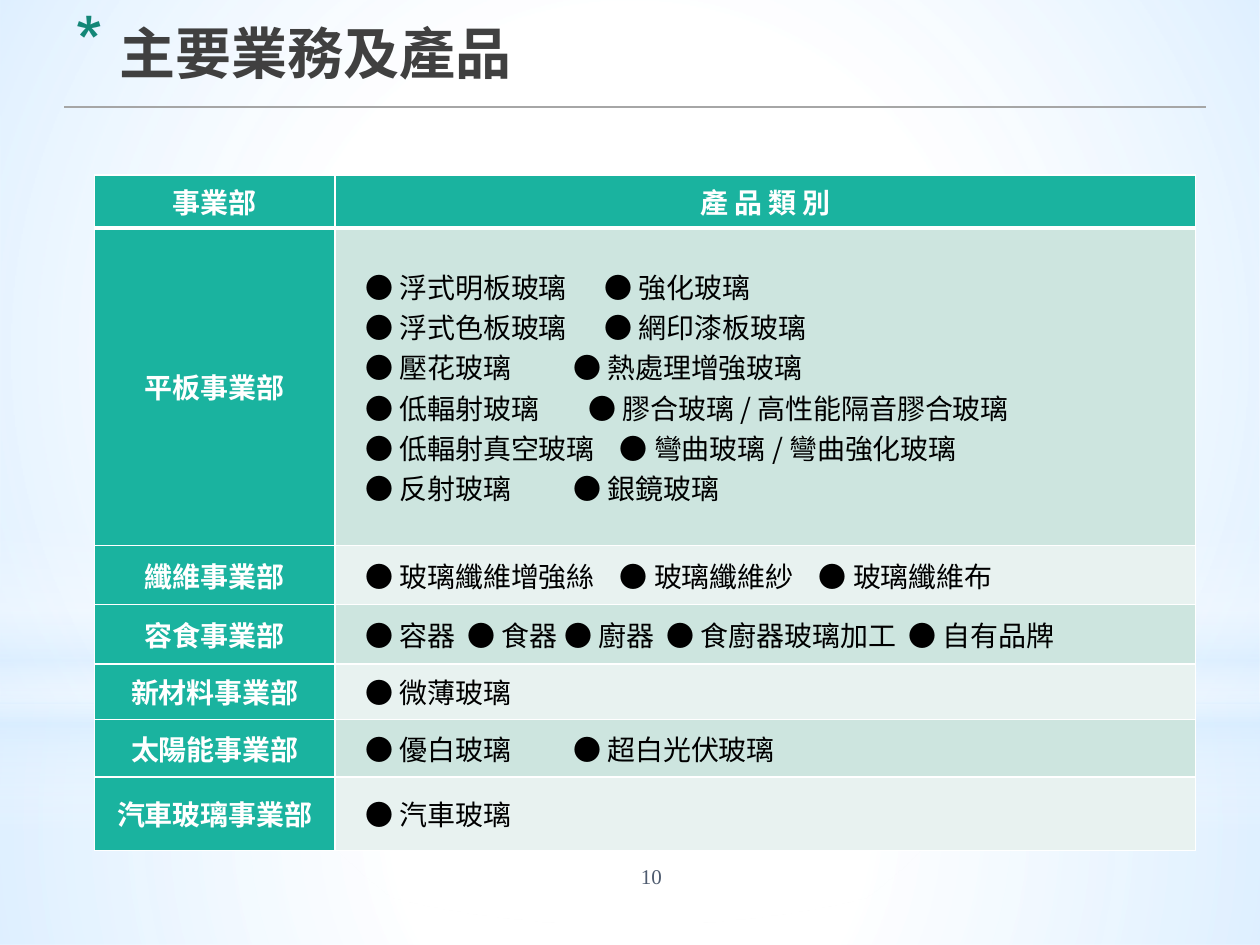
"""Build the slide on main businesses and products."""
from lxml import etree
from pptx import Presentation
from pptx.dml.color import RGBColor
from pptx.enum import shapes, text
from pptx.oxml import ns, parse_xml
from pptx.util import Inches, Pt

HUES = {"white": "FFFFFF", "sky": "D6ECFF", "teal": "1AB39F", "star": "138677",
        "mint": "CDE5DF", "pale": "E8F2F0", "ink": "000000", "dark": "404040",
        "rule": "A6A6A6", "slate": "4E5B6F"}
SANS, SERIF = "Noto Sans CJK SC", "Times New Roman"
TITLE, PAGE = "主要業務及產品", "10"
HEADS = ["事業部", "產 品 類 別"]
# Each line: tab stops in inches, then the products
UNITS = [
    ("平板事業部", 2.52, [
        ([1.9], ["浮式明板玻璃", "強化玻璃"]),
        ([1.9], ["浮式色板玻璃", "網印漆板玻璃"]),
        ([1.65], ["壓花玻璃", "熱處理增強玻璃"]),
        ([1.77], ["低輻射玻璃", "膠合玻璃 / 高性能隔音膠合玻璃"]),
        ([2.02], ["低輻射真空玻璃", "彎曲玻璃 / 彎曲強化玻璃"]),
        ([1.65], ["反射玻璃", "銀鏡玻璃"])]),
    ("纖維事業部", 0.47, [([2.02, 3.6], ["玻璃纖維增強絲", "玻璃纖維紗", "玻璃纖維布"])]),
    ("容食事業部", 0.47, [([0.81, 1.58, 2.39, 4.31],
                      ["容器", "食器", "廚器", "食廚器玻璃加工", "自有品牌"])]),
    ("新材料事業部", 0.44, [([], ["微薄玻璃"])]),
    ("太陽能事業部", 0.46, [([1.65], ["優白玻璃", "超白光伏玻璃"])]),
    ("汽車玻璃事業部", 0.58, [([], ["汽車玻璃"])]),
]
ROUND = '<a:path path="circle"><a:fillToRect l="50000" t="50000" r="50000" b="50000"/></a:path>'
DOWN = '<a:lin ang="5400000" scaled="0"/>'
BACK = [
    ("RECTANGLE", (0, 5.58, 10, 1.92), ROUND,
     [(0, "white", 91), (37, "white", 76), (100, "sky", 79)]),
    ("RECTANGLE", (0, 0, 10, 5.58), ROUND,
     [(0, "white", 89), (48, "white", 62), (100, "sky", 79)]),
    ("RECTANGLE", (0, 4.12, 10, 2.5), DOWN,
     [(0, "white", 0), (29, "white", 30), (45, "sky", 40),
      (55, "white", 26), (65, "sky", 60), (100, "white", 0)]),
    ("OVAL", (0, 1.75, 10, 5.58), ROUND, [(0, "white", 100), (56, "white", 0)]),
]


def rgb(name):
    return RGBColor.from_string(HUES[name])


def node(xml):
    return parse_xml(xml.replace(">", f" {ns.nsdecls('a')}>", 1) if "/>" not in xml.split(">")[0] + ">"
                     else xml.replace("/>", f" {ns.nsdecls('a')}/>", 1))


def place(shape, box):
    shape.left, shape.top, shape.width, shape.height = map(Inches, box)


def style(para, size, hue, face=SANS, bold=False):
    font = para.font
    font.size, font.bold, font.name = Pt(size), bold, face
    font.color.rgb = rgb(hue)
    base = para._p.pPr.find(ns.qn("a:defRPr"))
    etree.SubElement(base, ns.qn("a:ea")).set("typeface", face)


def glow(slide, kind, box, path, stops):
    shape = slide.shapes.add_shape(shapes.MSO_SHAPE[kind], *map(Inches, box))
    shape.shadow.inherit = False
    shape.line.fill.background()
    marks = "".join(f'<a:gs pos="{pos * 1000}"><a:srgbClr val="{HUES[hue]}">'
                    f'<a:alpha val="{alpha * 1000}"/></a:srgbClr></a:gs>'
                    for pos, hue, alpha in stops)
    fill = node(f'<a:gradFill rotWithShape="1"><a:gsLst>{marks}</a:gsLst>{path}</a:gradFill>')
    shape._element.spPr.find(ns.qn("a:prstGeom")).addnext(fill)


def rule(slide):
    line = slide.shapes.add_connector(shapes.MSO_CONNECTOR.STRAIGHT,
                                      *map(Inches, (0.51, 0.85, 9.57, 0.85)))
    line.line.color.rgb, line.line.width = rgb("rule"), Pt(0.75)
    etree.SubElement(line._element.spPr, ns.qn("a:effectLst"))


def head(slide):
    title = slide.shapes.title
    place(title, (0.5, 0.06, 6.39, 0.7))
    slide.shapes._spTree.append(title._element)
    frame = title.text_frame
    frame.text, frame.vertical_anchor = TITLE, text.MSO_ANCHOR.MIDDLE
    para = frame.paragraphs[0]
    para.alignment = text.PP_ALIGN.LEFT
    props = para._p.get_or_add_pPr()
    props.set("marL", str(Inches(0.35)))
    props.set("indent", str(Inches(-0.35)))
    for xml in (f'<a:buClr><a:srgbClr val="{HUES["star"]}"/></a:buClr>',
                '<a:buSzPct val="128000"/>', '<a:buChar char="*"/>'):
        props.append(node(xml))
    style(para, 32, "dark", bold=True)


def page(slide):
    box = slide.shapes.add_textbox(*map(Inches, (4.17, 6.75, 2, 0.4)))
    frame = box.text_frame
    frame.word_wrap, frame.vertical_anchor = True, text.MSO_ANCHOR.MIDDLE
    frame.text = PAGE
    para = frame.paragraphs[0]
    para.alignment = text.PP_ALIGN.CENTER
    style(para, 12, "slate", SERIF)


def cell(item, lines, fill, hue, edges, label=True):
    item.margin_left = Inches(0.07 if label else 0.24)
    item.margin_right = Inches(0.07)
    item.margin_top = item.margin_bottom = 0
    item.vertical_anchor = text.MSO_ANCHOR.MIDDLE
    for side, width in zip("LRTB", edges):
        item._tc.get_or_add_tcPr().append(node(
            f'<a:ln{side} w="{Pt(width)}"><a:solidFill><a:srgbClr val="{HUES["white"]}"/>'
            f'</a:solidFill></a:ln{side}>'))
    item.fill.solid()
    item.fill.fore_color.rgb = rgb(fill)
    frame = item.text_frame
    frame.text = "\n".join(words for _, words in lines)
    for para, (tabs, _) in zip(frame.paragraphs, lines):
        if tabs:
            stops = "".join(f'<a:tab pos="{Inches(tab)}" algn="l"/>' for tab in tabs)
            para._p.get_or_add_pPr().append(node(f"<a:tabLst>{stops}</a:tabLst>"))
        para.alignment = text.PP_ALIGN.CENTER if label else text.PP_ALIGN.LEFT
        para.line_spacing = Pt(23)
        style(para, 16, hue, bold=label)


def grid(slide):
    highs = [0.42] + [high for _, high, _ in UNITS]
    frame = slide.shapes.add_table(len(highs), 2, *map(Inches, (0.75, 1.39, 8.74, sum(highs))))
    table = frame.table
    table.first_row = table.horz_banding = False
    for col, wide in zip(table.columns, (1.91, 6.83)):
        col.width = Inches(wide)
    for row, high in zip(table.rows, highs):
        row.height = Inches(high)
    for col, words in enumerate(HEADS):
        cell(table.cell(0, col), [([], words)], "teal", "white", (1, 1, 1, 3))
    for row, (name, _, goods) in enumerate(UNITS, 1):
        edges = (1, 1, 3 if row == 1 else 1, 1)
        lines = [(tabs, "\t".join(f"● {good}" for good in names)) for tabs, names in goods]
        cell(table.cell(row, 0), [([], name)], "teal", "white", edges)
        cell(table.cell(row, 1), lines, "mint" if row % 2 else "pale", "ink", edges, False)


def main():
    deck = Presentation()
    deck.slide_width, deck.slide_height = Inches(10), Inches(7.5)
    slide = deck.slides.add_slide(deck.slide_layouts[5])
    for part in BACK:
        glow(slide, *part)
    rule(slide)
    head(slide)
    page(slide)
    grid(slide)
    deck.save("out.pptx")


if __name__ == "__main__":
    main()
